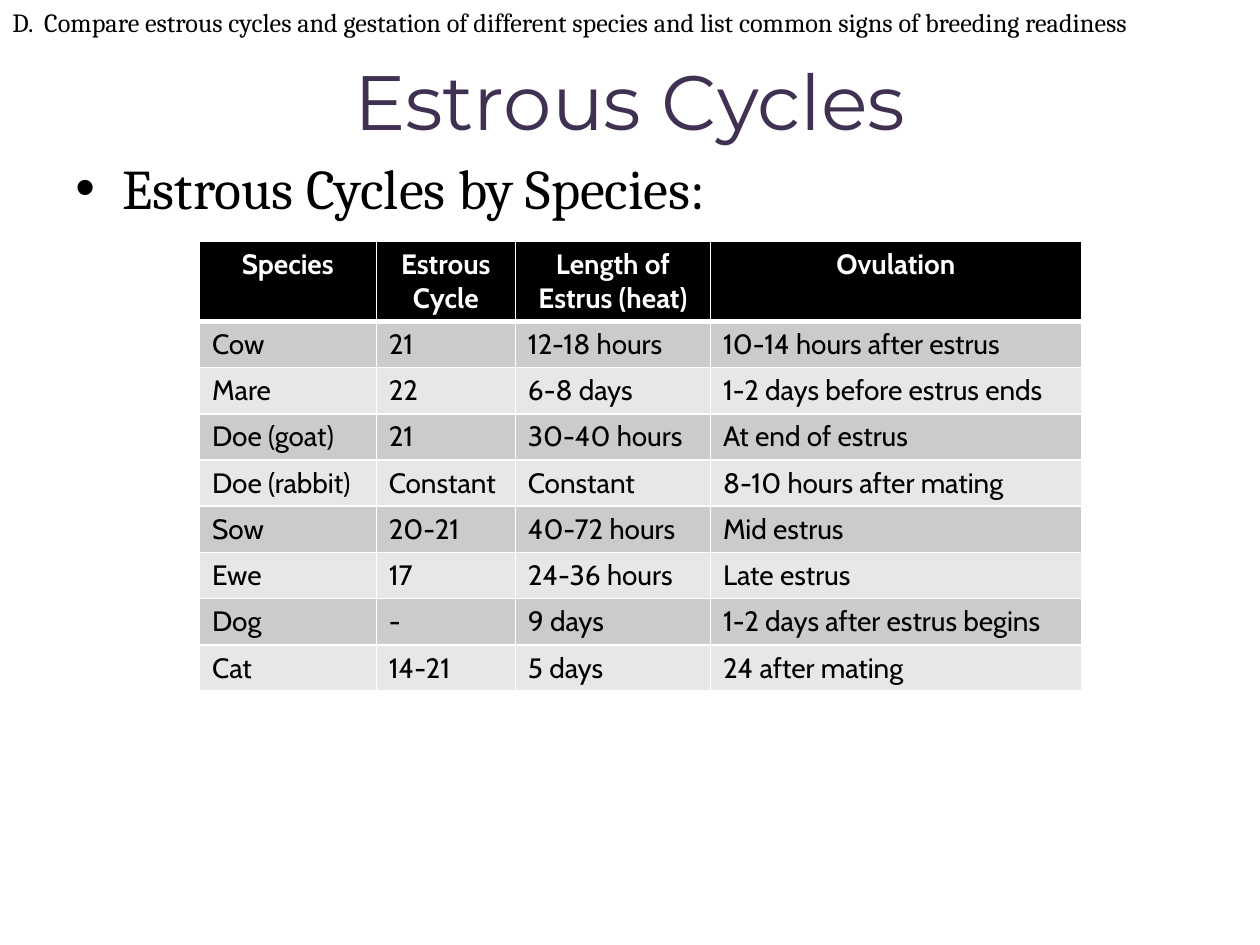
from dataclasses import dataclass

from lxml.etree import SubElement
from pptx import Presentation
from pptx.dml.color import RGBColor as Color
from pptx.enum.text import MSO_ANCHOR as Anchor, PP_ALIGN as Align
from pptx.oxml.ns import qn
from pptx.util import Pt


@dataclass(frozen=True)
class Theme:
    title_font: str = "Montserrat"
    body_font: str = "Cambria"
    table_font: str = "Cabin"
    title_size: float = 44
    body_size: float = 32
    objective_size: float = 15
    table_size: float = 16
    purple: str = "403152"
    black: str = "000000"
    white: str = "FFFFFF"
    bands: tuple = ("CBCBCB", "E7E7E7")
    thin: float = 1
    thick: float = 3


class SlideBuilder:
    def __init__(self, presentation, theme):
        self.theme = theme
        self.slide = presentation.slides.add_slide(presentation.slide_layouts[5])

    def format(self, paragraph, font, size, color, bold=False, align=Align.LEFT):
        paragraph.alignment = align
        paragraph.font.name = font
        paragraph.font.size = Pt(size)
        paragraph.font.bold = bold
        paragraph.font.color.rgb = Color.from_string(color)

    def title(self, text, left, top, width, height):
        shape = self.slide.shapes.title
        shape.left, shape.top = Pt(left), Pt(top)
        shape.width, shape.height = Pt(width), Pt(height)
        frame = shape.text_frame
        frame.text = text
        frame.vertical_anchor = Anchor.MIDDLE
        self.format(frame.paragraphs[0], self.theme.title_font, self.theme.title_size,
                    self.theme.purple, align=Align.CENTER)

    def text(self, text, left, top, width, height, size, bullet_indent=0):
        shape = self.slide.shapes.add_textbox(Pt(left), Pt(top), Pt(width), Pt(height))
        frame = shape.text_frame
        frame.word_wrap = True
        frame.text = text
        paragraph = frame.paragraphs[0]
        if bullet_indent:
            properties = paragraph._p.get_or_add_pPr()
            properties.set("marL", str(Pt(bullet_indent)))
            properties.set("indent", str(-Pt(bullet_indent)))
            SubElement(properties, qn("a:buFont"), typeface="Arial")
            SubElement(properties, qn("a:buChar"), char="•")
        self.format(paragraph, self.theme.body_font, size, self.theme.black)

    def border(self, cell, side, width):
        line = SubElement(cell._tc.get_or_add_tcPr(), qn(f"a:ln{side}"), w=str(Pt(width)))
        fill = SubElement(line, qn("a:solidFill"))
        SubElement(fill, qn("a:srgbClr"), val=self.theme.white)

    def table(self, rows, left, top, column_widths, header_height, row_height):
        theme = self.theme
        heights = [header_height] + [row_height] * (len(rows) - 1)
        table = self.slide.shapes.add_table(
            len(rows), len(column_widths), Pt(left), Pt(top),
            Pt(sum(column_widths)), Pt(sum(heights))).table
        for column, width in zip(table.columns, column_widths):
            column.width = Pt(width)
        for row_index, values in enumerate(rows):
            table.rows[row_index].height = Pt(heights[row_index])
            header = row_index == 0
            fill = theme.black if header else theme.bands[(row_index - 1) % 2]
            # A thick rule separates the header from the first species
            edges = {"L": theme.thin, "R": theme.thin,
                     "T": theme.thick if row_index == 1 else theme.thin,
                     "B": theme.thick if header else theme.thin}
            for column_index, value in enumerate(values):
                cell = table.cell(row_index, column_index)
                for side, width in edges.items():
                    self.border(cell, side, width)
                cell.fill.solid()
                cell.fill.fore_color.rgb = Color.from_string(fill)
                cell.text = value
                self.format(cell.text_frame.paragraphs[0], theme.table_font, theme.table_size,
                            theme.white if header else theme.black, bold=header,
                            align=Align.CENTER if header else Align.LEFT)


CYCLES = [
    ("Species", "Estrous Cycle", "Length of Estrus (heat)", "Ovulation"),
    ("Cow", "21", "12-18 hours", "10-14 hours after estrus"),
    ("Mare", "22", "6-8 days", "1-2 days before estrus ends"),
    ("Doe (goat)", "21", "30-40 hours", "At end of estrus"),
    ("Doe (rabbit)", "Constant", "Constant", "8-10 hours after mating"),
    ("Sow", "20-21", "40-72 hours", "Mid estrus"),
    ("Ewe", "17", "24-36 hours", "Late estrus"),
    ("Dog", "-", "9 days", "1-2 days after estrus begins"),
    ("Cat", "14-21", "5 days", "24 after mating"),
]


def main():
    presentation = Presentation()
    presentation.slide_width, presentation.slide_height = Pt(720), Pt(540)
    theme = Theme()
    builder = SlideBuilder(presentation, theme)

    # Title and lead-in
    builder.title("Estrous Cycles", 0, 12, 720, 90)
    builder.text("Estrous Cycles by Species:", 36, 84, 648, 342,
                 theme.body_size, bullet_indent=27)

    # Learning objective along the top edge
    builder.text("D.  Compare estrous cycles and gestation of different species "
                 "and list common signs of breeding readiness",
                 0, 0, 720, 62, theme.objective_size)

    # Species comparison
    builder.table(CYCLES, 114, 138, (101, 79.5, 111.5, 212), 45.6, 26.4)

    presentation.save("out.pptx")


if __name__ == "__main__":
    main()
